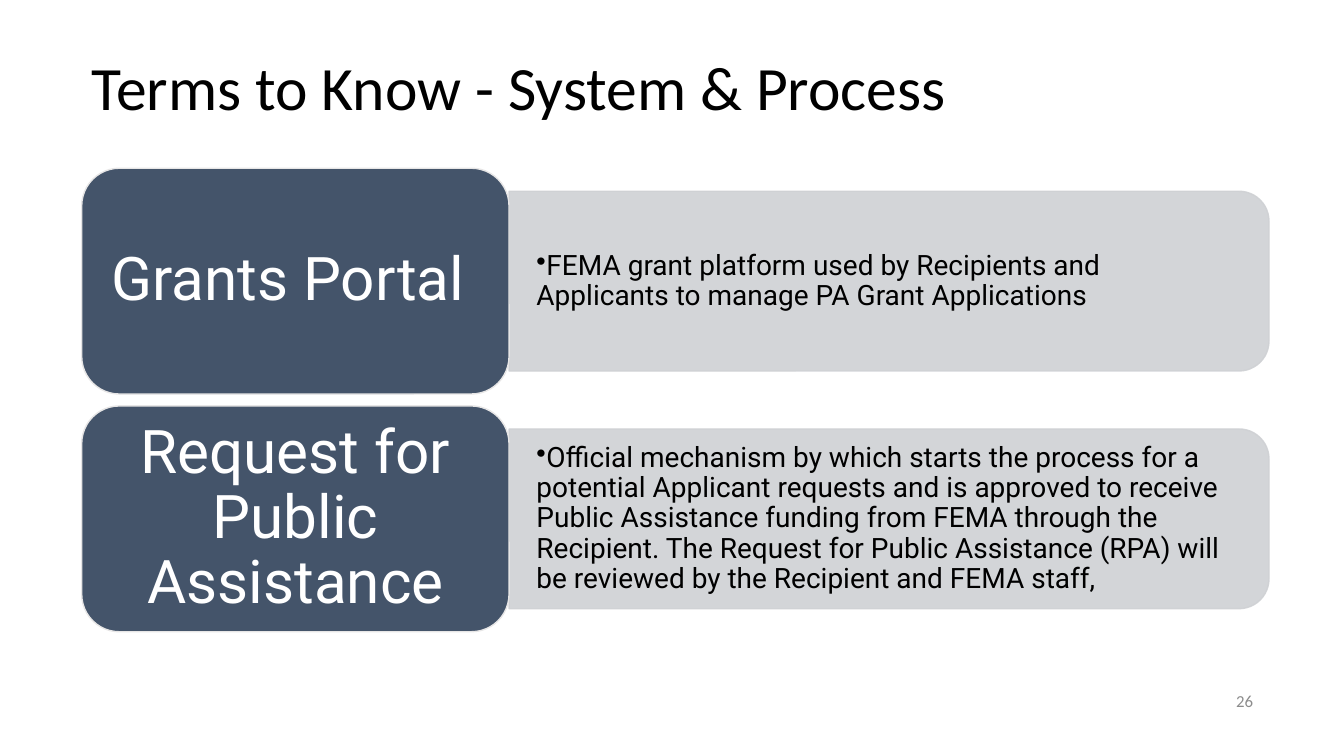
"""Build a slide that defines two system and process terms."""
from dataclasses import dataclass

from lxml import etree
from pptx import Presentation
from pptx.dml.color import RGBColor
from pptx.enum.shapes import MSO_SHAPE
from pptx.enum.text import MSO_ANCHOR, MSO_AUTO_SIZE, PP_ALIGN
from pptx.oxml.ns import qn
from pptx.util import Cm, Pt

ROUNDED = MSO_SHAPE.ROUNDED_RECTANGLE
ROUND_TOP = MSO_SHAPE.ROUND_2_SAME_RECTANGLE
MIDDLE = MSO_ANCHOR.MIDDLE
NO_AUTOFIT = MSO_AUTO_SIZE.NONE
LEFT, CENTER, RIGHT = PP_ALIGN.LEFT, PP_ALIGN.CENTER, PP_ALIGN.RIGHT
TITLE_ONLY = 5


@dataclass(frozen=True)
class Theme:
    heading_font: str = "Calibri"
    body_font: str = "Roboto"
    title_size: int = 44
    term_size: int = 43
    definition_size: int = 20
    number_size: int = 12
    black: str = "000000"
    white: str = "FFFFFF"
    gray: str = "8C8C8C"
    card: str = "44546A"
    card_line: str = "E7E6E6"
    panel: str = "CFD1D4"
    panel_opacity: int = 90


THEME = Theme()
CARD_LEFT, CARD_TOP = 2.06, 4.24
CARD_WIDTH, CARD_HEIGHT = 10.77, 5.69
ROW_PITCH = 5.99
PANEL_LEFT = CARD_LEFT + CARD_WIDTH
PANEL_WIDTH, PANEL_HEIGHT = 19.15, 4.53
DEFINITION_WIDTH, DEFINITION_HEIGHT = 18.92, 4.1

TERMS = [
    ("Grants Portal ",
     "FEMA grant platform used by Recipients and Applicants to manage PA Grant Applications"),
    ("Request for Public Assistance",
     "Official mechanism by which starts the process for a potential Applicant requests and "
     "is approved to receive Public Assistance funding from FEMA through the Recipient. "
     "The Request for Public Assistance (RPA) will be reviewed by the Recipient and FEMA staff,"),
]


def write_text(shape, text, *, size, color, font=THEME.body_font, align=LEFT,
               spacing=0.9, insets=(0.25, 0.13), bullet=False):
    frame = shape.text_frame
    frame.word_wrap = True
    frame.auto_size = NO_AUTOFIT
    frame.vertical_anchor = MIDDLE
    frame.margin_left = frame.margin_right = Cm(insets[0])
    frame.margin_top = frame.margin_bottom = Cm(insets[1])
    paragraph = frame.paragraphs[0]
    paragraph.alignment = align
    paragraph.line_spacing = spacing
    run = paragraph.add_run()
    run.text = text
    run.font.name = font
    run.font.size = Pt(size)
    run.font.color.rgb = RGBColor.from_string(color)
    if bullet:
        properties = paragraph._p.get_or_add_pPr()
        properties.set("marL", "0")
        properties.set("indent", "0")
        etree.SubElement(properties, qn("a:buChar"), char="•")


def add_box(slide, kind, left, top, width, height, fill, line, opacity=100):
    shape = slide.shapes.add_shape(kind, Cm(left), Cm(top), Cm(width), Cm(height))
    shape.shadow.inherit = False
    shape.fill.solid()
    shape.fill.fore_color.rgb = RGBColor.from_string(fill)
    shape.line.color.rgb = RGBColor.from_string(line)
    shape.line.width = Pt(1)
    if opacity < 100:
        for color in shape._element.spPr.iter(qn("a:srgbClr")):
            etree.SubElement(color, qn("a:alpha"), val=str(opacity * 1000))
    return shape


def add_text_box(slide, text, left, top, width, height, **text_format):
    box = slide.shapes.add_textbox(Cm(left), Cm(top), Cm(width), Cm(height))
    write_text(box, text, **text_format)


def add_panel(slide, middle):
    center = PANEL_LEFT + PANEL_WIDTH / 2
    panel = add_box(slide, ROUND_TOP, center - PANEL_HEIGHT / 2, middle - PANEL_WIDTH / 2,
                    PANEL_HEIGHT, PANEL_WIDTH, THEME.panel, THEME.panel, THEME.panel_opacity)
    panel.rotation = 90


def add_term(slide, row, term, definition):
    top = CARD_TOP + row * ROW_PITCH
    middle = top + CARD_HEIGHT / 2
    add_panel(slide, middle)
    add_text_box(slide, definition, PANEL_LEFT, middle - DEFINITION_HEIGHT / 2,
                 DEFINITION_WIDTH, DEFINITION_HEIGHT, size=THEME.definition_size,
                 color=THEME.black, insets=(0.69, 0.36), bullet=True)
    card = add_box(slide, ROUNDED, CARD_LEFT, top, CARD_WIDTH, CARD_HEIGHT,
                   THEME.card, THEME.card_line)
    write_text(card, term, size=THEME.term_size, color=THEME.white, align=CENTER,
               insets=(0.46, 0.23))


def set_title(slide, text):
    title = slide.shapes.title
    title.left, title.top = Cm(CARD_LEFT), Cm(1.24)
    title.width, title.height = Cm(29.77), Cm(2.06)
    write_text(title, text, size=THEME.title_size, color=THEME.black, font=THEME.heading_font)


def main():
    presentation = Presentation()
    presentation.slide_width, presentation.slide_height = Cm(33.87), Cm(19.05)
    slide = presentation.slides.add_slide(presentation.slide_layouts[TITLE_ONLY])
    set_title(slide, "Terms to Know - System & Process")
    for row, (term, definition) in enumerate(TERMS):
        add_term(slide, row, term, definition)
    add_text_box(slide, "26", 29.29, 17.15, 2.54, 1.02, size=THEME.number_size,
                 color=THEME.gray, font=THEME.heading_font, align=RIGHT, spacing=1.0)
    presentation.save("out.pptx")


if __name__ == "__main__":
    main()
